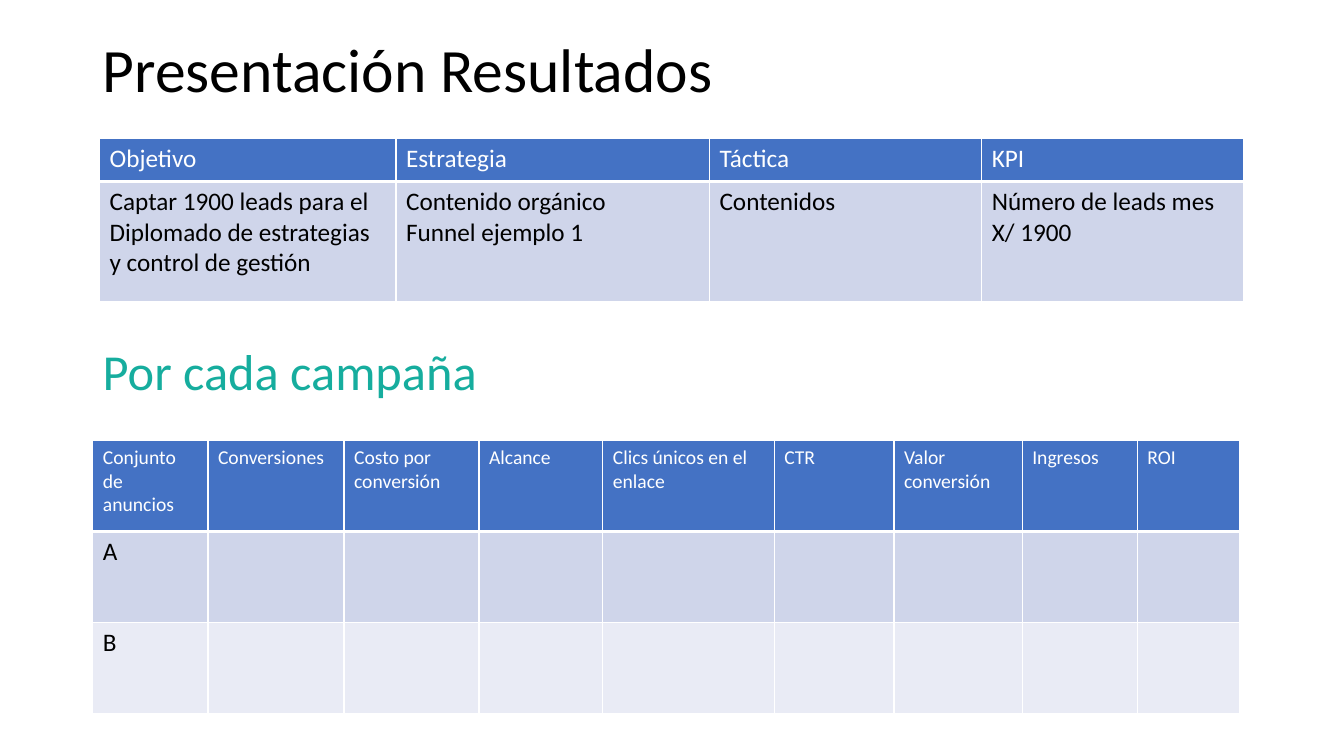
"""Build the campaign results slide with its two tables."""
from dataclasses import dataclass

from pptx import Presentation
from pptx import util as u
from pptx.dml.color import RGBColor
from pptx.enum import text
from pptx.oxml import parse_xml
from pptx.oxml.ns import nsdecls

FONT = "Calibri"
WHITE, BLACK, TEAL = "FFFFFF", "000000", "16AD9E"
HEADER_FILL = "4472C4"
BAND_FILLS = ("CFD5EA", "E9EBF5")
BODY_SIZE = 18


@dataclass
class Heading:
    wording: str
    top: float
    size: int
    color: str


@dataclass
class Grid:
    left: float
    top: float
    widths: list[float]
    heights: list[float]
    header_size: int
    rows: list[list[str]]


HEADINGS = [
    Heading("Presentación Resultados", 0, 44, BLACK),
    Heading("Por cada campaña", 7.59, 36, TEAL),
]

GRIDS = [
    Grid(2.51, 3.5, [7.47, 7.9, 6.86, 6.6], [1.07, 3.02], 18, [
        ["Objetivo", "Estrategia", "Táctica", "KPI"],
        ["Captar 1900 leads para el Diplomado de estrategias y control de gestión",
         "Contenido orgánico\nFunnel ejemplo 1",
         "Contenidos",
         "Número de leads mes X/ 1900"],
    ]),
    Grid(2.34, 11.1, [2.9, 3.43, 3.4, 3.12, 4.32, 3.02, 3.23, 2.9, 2.59], [2.29] * 3, 14, [
        ["Conjunto de anuncios", "Conversiones", "Costo por conversión", "Alcance",
         "Clics únicos en el enlace", "CTR", "Valor conversión", "Ingresos", "ROI"],
        ["A"] + [""] * 8,
        ["B"] + [""] * 8,
    ]),
]


def rgb(color: str) -> RGBColor:
    return RGBColor.from_string(color)


def write(frame, wording: str, size: int, color: str, spacing: float = 1.0) -> None:
    for index, line in enumerate(wording.split("\n")):
        para = frame.add_paragraph() if index else frame.paragraphs[0]
        para.line_spacing = spacing
        para.font.size = u.Pt(size)
        if line:
            span = para.add_run()
            span.text = line
            span.font.name = FONT
            span.font.size = u.Pt(size)
            span.font.bold = False
            span.font.color.rgb = rgb(color)


def draw_heading(page, heading: Heading) -> None:
    box = page.shapes.add_textbox(u.Cm(2.34), u.Cm(heading.top), u.Cm(22.99), u.Cm(3.68))
    box.text_frame.word_wrap = True
    box.text_frame.vertical_anchor = text.MSO_ANCHOR.MIDDLE
    write(box.text_frame, heading.wording, heading.size, heading.color, 0.9)


def add_borders(cell, bottom: int) -> None:
    properties = cell._tc.get_or_add_tcPr()
    for side, points in (("L", 1), ("R", 1), ("T", 1), ("B", bottom)):
        properties.append(parse_xml(
            f'<a:ln{side} {nsdecls("a")} w="{u.Pt(points)}"><a:solidFill>'
            f'<a:srgbClr val="{WHITE}"/></a:solidFill></a:ln{side}>'))


def draw_grid(page, grid: Grid) -> None:
    table = page.shapes.add_table(
        len(grid.heights), len(grid.widths), u.Cm(grid.left), u.Cm(grid.top),
        u.Cm(sum(grid.widths)), u.Cm(sum(grid.heights))).table
    for column, width in zip(table.columns, grid.widths):
        column.width = u.Cm(width)
    for row_index, (row, height) in enumerate(zip(table.rows, grid.heights)):
        row.height = u.Cm(height)
        header = row_index == 0
        fill = HEADER_FILL if header else BAND_FILLS[(row_index - 1) % 2]
        for cell, wording in zip(row.cells, grid.rows[row_index]):
            add_borders(cell, 3 if header else 1)
            cell.fill.solid()
            cell.fill.fore_color.rgb = rgb(fill)
            write(cell.text_frame, wording, grid.header_size if header else BODY_SIZE,
                  WHITE if header else BLACK)


def main() -> None:
    deck = Presentation()
    deck.slide_width, deck.slide_height = u.Cm(33.87), u.Cm(19.05)
    page = deck.slides.add_slide(deck.slide_layouts[6])
    for heading in HEADINGS:
        draw_heading(page, heading)
    for grid in GRIDS:
        draw_grid(page, grid)
    deck.save("out.pptx")


if __name__ == "__main__":
    main()
